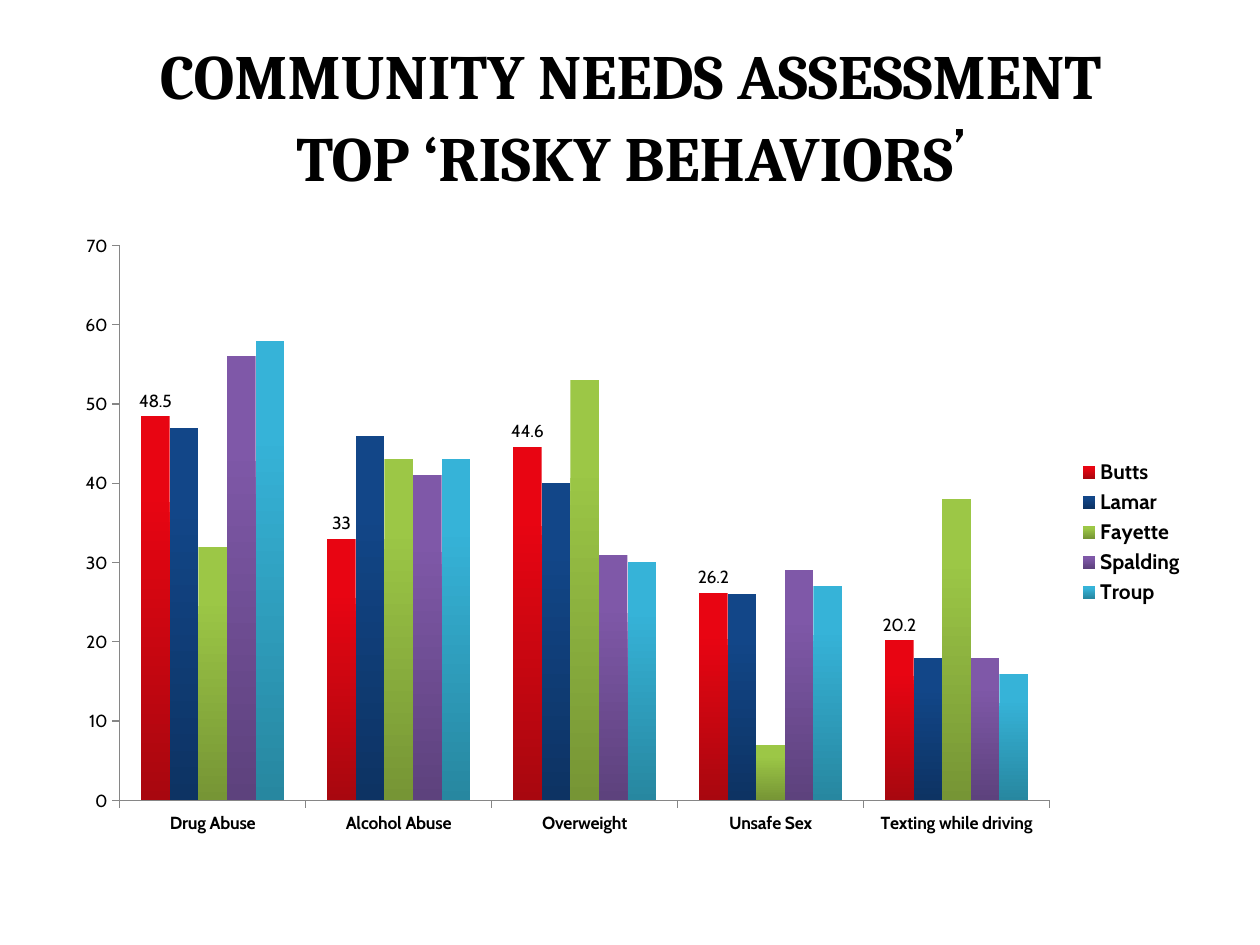
import dataclasses

import pptx
import pptx.chart.data
import pptx.dml.color
import pptx.enum.chart
import pptx.enum.text
import pptx.oxml
import pptx.oxml.ns
import pptx.util
from pptx.util import Inches

BODY_FONT = "Cabin"
TITLE_FONT = "Cambria"
BLACK = "000000"
AXIS_GREY = "868686"

CATEGORIES = ["Drug Abuse", "Alcohol Abuse", "Overweight", "Unsafe Sex", "Texting while driving"]


@dataclasses.dataclass(frozen=True)
class County:
    name: str
    values: tuple[float, ...]
    top_color: str
    bottom_color: str
    labelled: bool = False


COUNTIES = [
    County("Butts", (48.5, 33, 44.6, 26.2, 20.2), "E80512", "A8070F", labelled=True),
    County("Lamar", (47, 46, 40, 26, 18), "124688", "0D3363"),
    County("Fayette", (32, 43, 53, 7, 38), "9CC746", "769535"),
    County("Spalding", (56, 41, 31, 29, 18), "7F58A8", "5D427D"),
    County("Troup", (58, 43, 30, 27, 16), "36B3D8", "2787A0"),
]


def rgb(color: str) -> pptx.dml.color.RGBColor:
    return pptx.dml.color.RGBColor.from_string(color)


def style_font(font, size: float, bold: bool = False, name: str = BODY_FONT) -> None:
    font.name = name
    font.size = pptx.util.Pt(size)
    font.bold = bold
    font.color.rgb = rgb(BLACK)


def fill_title(title) -> None:
    title.left, title.top = Inches(0.17), Inches(0.38)
    title.width, title.height = Inches(9.67), Inches(1.08)
    frame = title.text_frame
    frame.word_wrap = True
    frame.auto_size = pptx.enum.text.MSO_AUTO_SIZE.NONE
    frame.vertical_anchor = pptx.enum.text.MSO_ANCHOR.MIDDLE
    heading = frame.paragraphs[0]
    heading.alignment = pptx.enum.text.PP_ALIGN.CENTER

    first_line = heading.add_run()
    first_line.text = "COMMUNITY NEEDS ASSESSMENT"
    style_font(first_line.font, 36, bold=True, name=TITLE_FONT)
    heading.add_line_break()
    second_line = heading.add_run()
    second_line.text = "TOP ‘RISKY BEHAVIORS"
    style_font(second_line.font, 36, bold=True, name=TITLE_FONT)
    closing_quote = heading.add_run()
    closing_quote.text = "’"
    style_font(closing_quote.font, 39.6)


def style_axis(axis, bold: bool = False) -> None:
    axis.has_major_gridlines = False
    axis.major_tick_mark = pptx.enum.chart.XL_TICK_MARK.OUTSIDE
    axis.minor_tick_mark = pptx.enum.chart.XL_TICK_MARK.NONE
    axis.format.line.color.rgb = rgb(AXIS_GREY)
    axis.format.line.width = pptx.util.Pt(0.75)
    style_font(axis.tick_labels.font, 10, bold)


def style_series(series, county: County) -> None:
    fill = series.format.fill
    fill.gradient()
    fill.gradient_angle = 270
    upper, lower = fill.gradient_stops
    upper.color.rgb, upper.position = rgb(county.top_color), 0.2
    lower.color.rgb, lower.position = rgb(county.bottom_color), 1
    series.invert_if_negative = False
    if county.labelled:
        labels = series.data_labels
        labels.show_value = True
        labels.position = pptx.enum.chart.XL_LABEL_POSITION.OUTSIDE_END
        style_font(labels.font, 10)


def place_plot(chart, x: float, y: float, w: float, h: float) -> None:
    """Fix the inner plot area, in fractions of the chart's size."""
    plot_area = chart.plots[0]._element.getparent()
    for old_layout in plot_area.findall(pptx.oxml.ns.qn("c:layout")):
        plot_area.remove(old_layout)
    sizes = "".join(f'<c:{key} val="{value}"/>' for key, value in zip("xywh", (x, y, w, h)))
    plot_area.insert(0, pptx.oxml.parse_xml(
        f'<c:layout {pptx.oxml.ns.nsdecls("c")}><c:manualLayout><c:layoutTarget val="inner"/>'
        f'<c:xMode val="edge"/><c:yMode val="edge"/>{sizes}</c:manualLayout></c:layout>'))


def add_behavior_chart(slide) -> None:
    data = pptx.chart.data.CategoryChartData()
    data.categories = CATEGORIES
    for county in COUNTIES:
        data.add_series(county.name, county.values)
    chart = slide.shapes.add_chart(
        pptx.enum.chart.XL_CHART_TYPE.COLUMN_CLUSTERED,
        Inches(0.5), Inches(1.75), Inches(9), Inches(4.95), data).chart
    chart.has_title = False
    style_font(chart.font, 10)

    columns = chart.plots[0]
    columns.gap_width = 150
    columns.overlap = 0
    columns.vary_by_categories = False
    for series, county in zip(columns.series, COUNTIES):
        style_series(series, county)

    style_axis(chart.category_axis, bold=True)
    style_axis(chart.value_axis)
    chart.value_axis.minimum_scale = 0
    chart.value_axis.maximum_scale = 70
    chart.value_axis.major_unit = 10

    chart.has_legend = True
    chart.legend.position = pptx.enum.chart.XL_LEGEND_POSITION.RIGHT
    chart.legend.include_in_layout = False
    style_font(chart.legend.font, 12, bold=True)
    place_plot(chart, 0.05, 0.04, 0.82, 0.89)


def main() -> None:
    deck = pptx.Presentation()
    deck.slide_width, deck.slide_height = Inches(10), Inches(7.5)
    slide = deck.slides.add_slide(deck.slide_layouts[5])
    fill_title(slide.shapes.title)
    add_behavior_chart(slide)
    deck.save("out.pptx")


if __name__ == "__main__":
    main()
